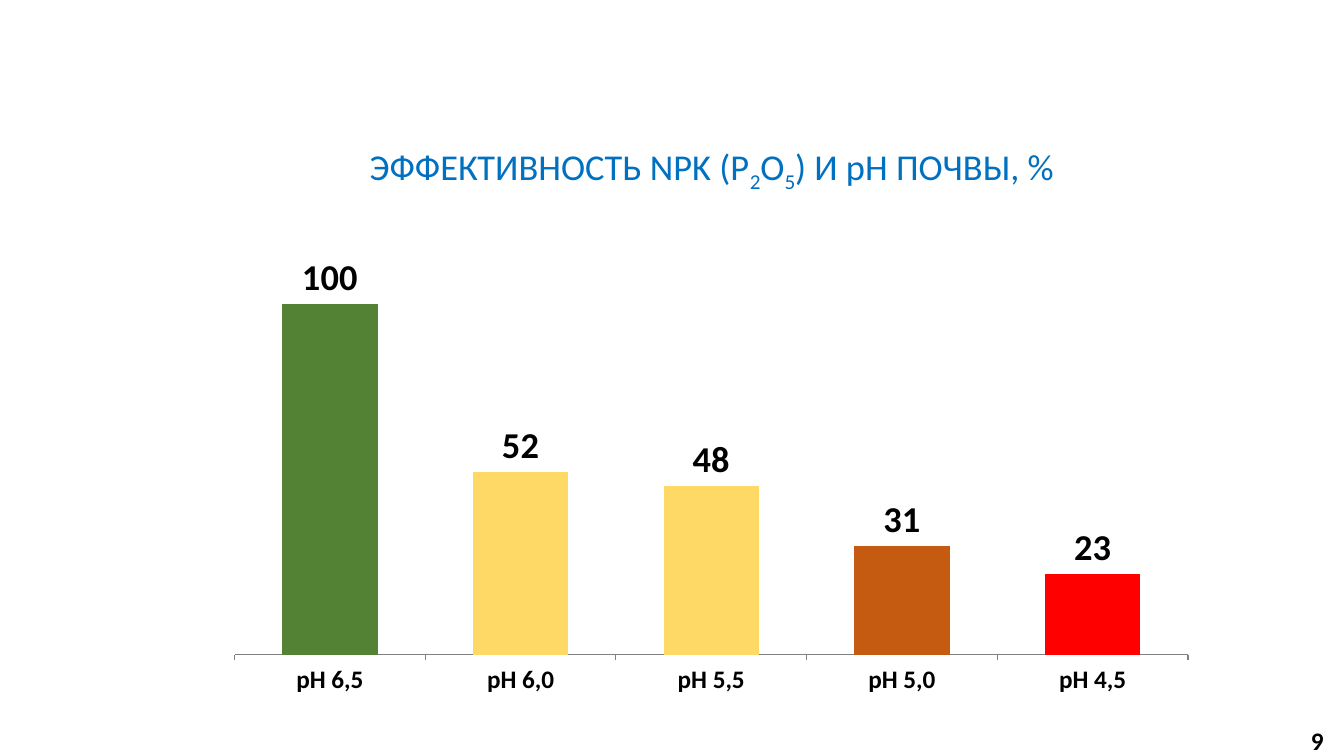
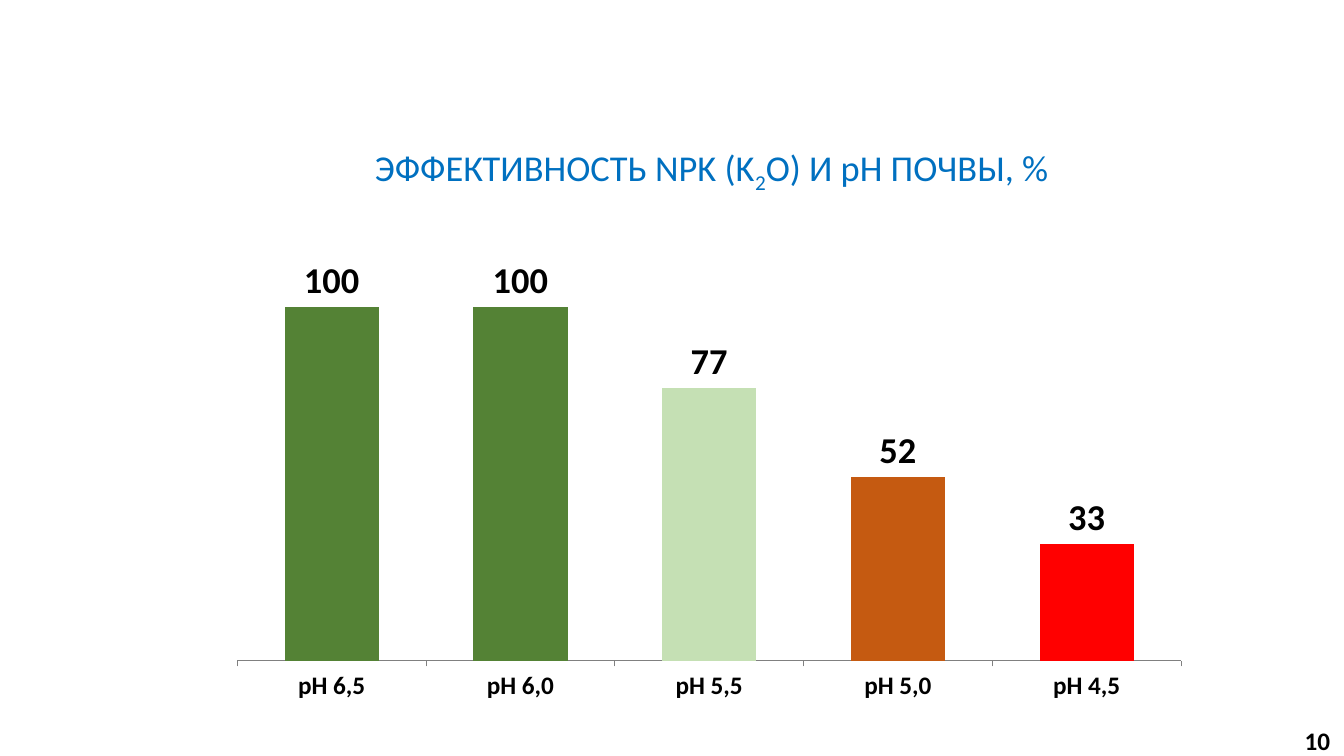
from dataclasses import dataclass

from pptx import Presentation
from pptx.chart.data import CategoryChartData
from pptx.dml.color import RGBColor
from pptx.enum.chart import XL_CHART_TYPE, XL_LABEL_POSITION, XL_TICK_MARK
from pptx.enum.shapes import MSO_SHAPE
from pptx.enum.text import MSO_ANCHOR, MSO_AUTO_SIZE, PP_ALIGN
from pptx.slide import Slide
from pptx.util import Inches, Pt


@dataclass(frozen=True)
class Theme:
    font: str = "Calibri"
    title: str = "0070C0"
    text: str = "000000"
    axis: str = "808080"
    series: str = "5B9BD5"
    green: str = "548235"
    light_green: str = "C5E0B4"
    yellow: str = "FFD966"
    orange: str = "C55A11"
    red: str = "FF0000"
    large: int = 26
    medium: int = 18
    small: int = 10


@dataclass(frozen=True)
class Bar:
    value: int
    color: str


@dataclass(frozen=True)
class ChartPage:
    number: int
    title: tuple[str, ...]  # normal and subscript pieces alternate
    title_top: float
    chart_area: tuple[float, float, float, float]
    bars: tuple[Bar, ...]


THEME = Theme()
ACIDITY_LEVELS = ("рН 6,5", "рН 6,0", "рН 5,5", "рН 5,0", "рН 4,5")
PAGES = (
    ChartPage(
        9, ("ЭФФЕКТИВНОСТЬ NPK (P", "2", "O", "5", ") И pH ПОЧВЫ, %"),
        1.38, (2.13, 2.22, 9.85, 4.77),
        (Bar(100, THEME.green), Bar(52, THEME.yellow), Bar(48, THEME.yellow),
         Bar(31, THEME.orange), Bar(23, THEME.red)),
    ),
    ChartPage(
        10, ("ЭФФЕКТИВНОСТЬ NPK (K", "2", "O) И pH ПОЧВЫ, %"),
        1.39, (2.16, 2.25, 9.75, 4.8),
        (Bar(100, THEME.green), Bar(100, THEME.green), Bar(77, THEME.light_green),
         Bar(52, THEME.orange), Bar(33, THEME.red)),
    ),
)


def style_font(font, size: int, color: str = THEME.text, bold: bool = False) -> None:
    font.name = THEME.font
    font.size = Pt(size)
    font.bold = bold
    font.color.rgb = RGBColor.from_string(color)


def add_title(page: Slide, pieces: tuple[str, ...], top: float) -> None:
    box = page.shapes.add_textbox(Inches(0.82), Inches(top), Inches(12.48), Inches(0.54))
    frame = box.text_frame
    frame.word_wrap = True
    frame.auto_size = MSO_AUTO_SIZE.SHAPE_TO_FIT_TEXT
    para = frame.paragraphs[0]
    para.alignment = PP_ALIGN.CENTER
    for index, piece in enumerate(pieces):
        span = para.add_run()
        span.text = piece
        style_font(span.font, THEME.large, THEME.title)
        if index % 2:
            span._r.get_or_add_rPr().set("baseline", "-25000")


def add_page_number(page: Slide, number: int) -> None:
    box = page.shapes.add_shape(
        MSO_SHAPE.ROUNDED_RECTANGLE,
        Inches(12.84), Inches(7.2), Inches(0.45), Inches(0.3))
    box.adjustments[0] = 0
    box.shadow.inherit = False
    box.fill.background()
    box.line.fill.background()
    frame = box.text_frame
    frame.margin_left = frame.margin_right = 0
    frame.vertical_anchor = MSO_ANCHOR.MIDDLE
    frame.text = str(number)
    para = frame.paragraphs[0]
    para.alignment = PP_ALIGN.CENTER
    style_font(para.runs[0].font, THEME.medium, bold=True)


def add_bar_chart(page: Slide, area: tuple[float, ...], bars: tuple[Bar, ...]) -> None:
    data = CategoryChartData()
    data.categories = ACIDITY_LEVELS
    data.add_series("Series 1", [bar.value for bar in bars])
    chart = page.shapes.add_chart(
        XL_CHART_TYPE.COLUMN_CLUSTERED, *map(Inches, area), data).chart
    chart.has_title = False
    chart.has_legend = False
    style_font(chart.font, THEME.small)

    categories = chart.category_axis
    categories.major_tick_mark = XL_TICK_MARK.OUTSIDE
    categories.format.line.color.rgb = RGBColor.from_string(THEME.axis)
    categories.format.line.width = Pt(0.75)
    style_font(categories.tick_labels.font, THEME.medium, bold=True)

    values = chart.value_axis
    values.minimum_scale = 0
    values.maximum_scale = 120
    values.has_major_gridlines = False
    values.visible = False

    plot = chart.plots[0]
    plot.vary_by_categories = False
    plot.gap_width = 100
    plot.overlap = -27
    series = plot.series[0]
    series.format.fill.solid()
    series.format.fill.fore_color.rgb = RGBColor.from_string(THEME.series)
    for index, bar in enumerate(bars):
        fill = series.points[index].format.fill
        fill.solid()
        fill.fore_color.rgb = RGBColor.from_string(bar.color)

    labels = series.data_labels
    labels.show_value = True
    labels.position = XL_LABEL_POSITION.OUTSIDE_END
    style_font(labels.font, THEME.large, bold=True)


def main() -> None:
    deck = Presentation()
    deck.slide_width = Inches(13.33)
    deck.slide_height = Inches(7.5)
    blank = deck.slide_layouts[6]
    for content in PAGES:
        page = deck.slides.add_slide(blank)
        add_title(page, content.title, content.title_top)
        add_page_number(page, content.number)
        add_bar_chart(page, content.chart_area, content.bars)
    deck.save("out.pptx")


if __name__ == "__main__":
    main()
